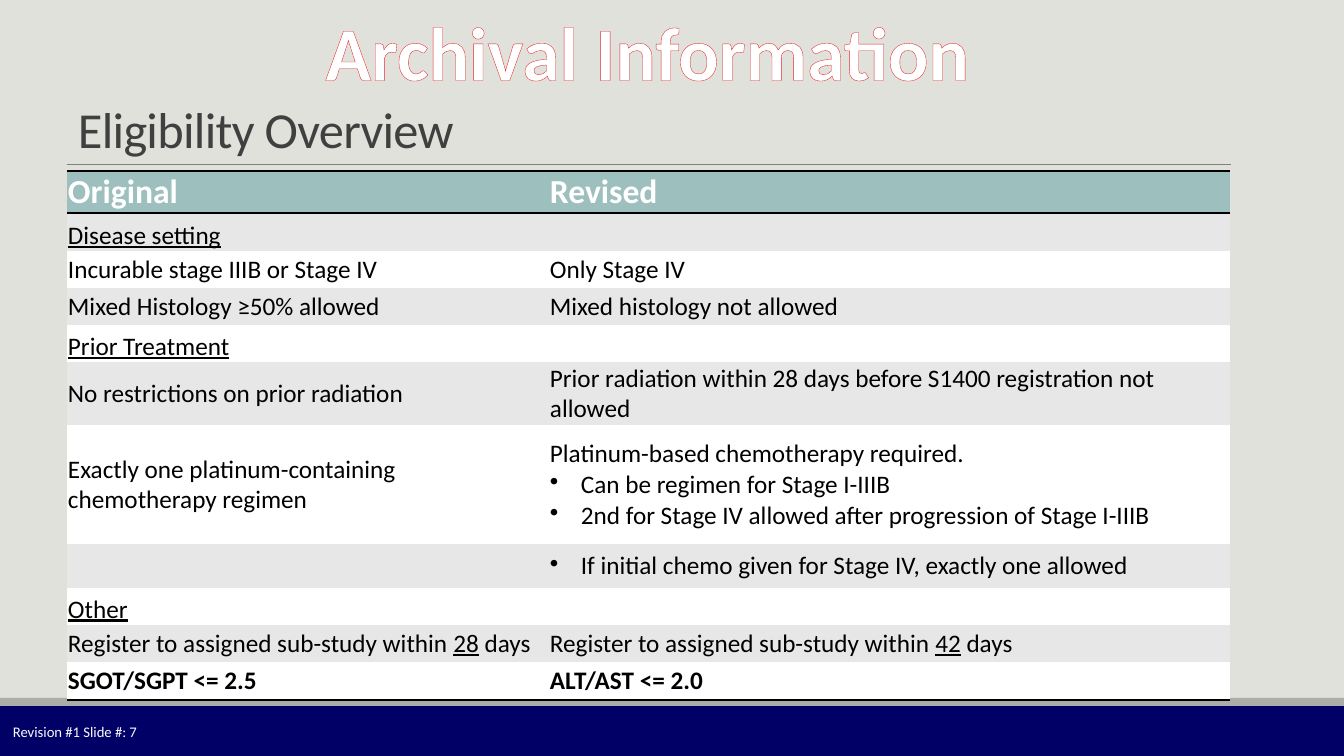
"""Build the eligibility overview slide with its table of original and revised criteria."""
import lxml.etree
import pptx
import pptx.dml.color
import pptx.enum.shapes
import pptx.enum.text
import pptx.oxml
import pptx.oxml.ns
import pptx.util

PX = 12192000 / 1344
COLORS = {
    "background": "E1E1DB", "footer": "000066", "footer edge": "ACADA8",
    "rule": "808080", "banner": "FFFFFF", "banner outline": "E62626",
    "title": "404040", "footer text": "FBFBFB", "header": "9DBFBE",
    "header text": "FFFFFF", "body text": "000000", "border": "000000",
    "odd row": "E7E7E7", "even row": "FFFFFF",
}
RGB = {part: pptx.dml.color.RGBColor.from_string(code) for part, code in COLORS.items()}
ANCHOR = pptx.enum.text.MSO_ANCHOR
ALIGN = pptx.enum.text.PP_ALIGN
NAMESPACE = pptx.oxml.ns.nsdecls("a")


def px(*lengths):
    return [round(length * PX) for length in lengths]


def add_run(paragraph, text, color, formats):
    run = paragraph.add_run()
    run.text = text
    run.font.name = "Calibri"
    run.font.color.rgb = RGB[color]
    for key, value in formats.items():
        setattr(run.font, key, value)
    return run


presentation = pptx.Presentation()
presentation.slide_width, presentation.slide_height = px(1344, 756)
slide = presentation.slides.add_slide(presentation.slide_layouts[6])
slide.background.fill.solid()
slide.background.fill.fore_color.rgb = RGB["background"]

for part, top, height in [("footer", 706, 50), ("footer edge", 698, 8)]:
    band = slide.shapes.add_shape(
        pptx.enum.shapes.MSO_SHAPE.RECTANGLE, *px(0, top, 1344, height))
    band.shadow.inherit = False
    band.fill.solid()
    band.fill.fore_color.rgb = RGB[part]
    band.line.fill.background()

rule = slide.shapes.add_connector(
    pptx.enum.shapes.MSO_CONNECTOR.STRAIGHT, *px(67, 164, 1231, 164))
rule.line.color.rgb = RGB["rule"]
rule.line.width = pptx.util.Pt(0.5)
lxml.etree.SubElement(rule._element.spPr, pptx.oxml.ns.qn("a:effectLst"))

labels = [
    ("banner", "Archival Information", (311, 0, 673, 102), ANCHOR.TOP,
     {"alignment": ALIGN.CENTER}, {"size": pptx.util.Pt(54), "bold": True}),
    ("title", "Eligibility Overview", (68, 4, 1162, 160), ANCHOR.BOTTOM,
     {"line_spacing": 0.85}, {"size": pptx.util.Pt(36)}),
    ("footer text", "Revision #1 Slide #: 7", (3, 712, 157, 40), ANCHOR.MIDDLE,
     {}, {"size": pptx.util.Pt(10.5)}),
]
label_runs = {}
for part, text, place, anchor, layout, formats in labels:
    frame = slide.shapes.add_textbox(*px(*place)).text_frame
    frame.word_wrap = True
    frame.vertical_anchor = anchor
    for key, value in layout.items():
        setattr(frame.paragraphs[0], key, value)
    label_runs[part] = add_run(frame.paragraphs[0], text, part, formats)

label_runs["title"].font._element.set("spc", "-50")
label_runs["banner"].font._element.insert(0, pptx.oxml.parse_xml(
    f'<a:ln {NAMESPACE} w="3175"><a:solidFill>'
    f'<a:srgbClr val="{COLORS["banner outline"]}"/></a:solidFill></a:ln>'))

criteria = [
    (42, "Original", "Revised"),
    (38, "_Disease setting_", ""),
    (37, "Incurable stage IIIB or Stage IV", "Only Stage IV"),
    (37, "Mixed Histology ≥50% allowed", "Mixed histology not allowed"),
    (37, "_Prior Treatment_", ""),
    (63, "No restrictions on prior radiation",
     "Prior radiation within 28 days before S1400 registration not allowed"),
    (119, "Exactly one platinum-containing chemotherapy regimen",
     "Platinum-based chemotherapy required.\n•Can be regimen for Stage I-IIIB\n"
     "•2nd for Stage IV allowed after progression of Stage I-IIIB"),
    (44, "", "•If initial chemo given for Stage IV, exactly one allowed"),
    (37, "_Other_", ""),
    (37, "Register to assigned sub-study within _28_ days",
     "Register to assigned sub-study within _42_ days"),
    (38, "SGOT/SGPT <= 2.5", "ALT/AST <= 2.0"),
]
last = len(criteria) - 1
table_frame = slide.shapes.add_table(
    len(criteria), 2, *px(67, 171, 1163, sum(row[0] for row in criteria)))
table = table_frame.table
table._tbl.tblPr.find(pptx.oxml.ns.qn("a:tableStyleId")).text = (
    "{2D5ABB26-0587-4C30-8999-92F81FD0307C}")
for column, width in zip(table.columns, px(482, 681)):
    column.width = width
cell_margins = dict(zip(
    ["margin_left", "margin_right", "margin_top", "margin_bottom"], px(1, 1, 1, 0)))

for index, (height, *texts) in enumerate(criteria):
    table.rows[index].height = px(height)[0]
    heading = index == 0 or texts[0].startswith("_")
    fill = "header" if index == 0 else "odd row" if index % 2 else "even row"
    color = "header text" if index == 0 else "body text"
    formats = {"size": pptx.util.Pt(24 if index == 0 else 18), "bold": index in (0, last)}
    edges = {0: ["lnT", "lnB"], last: ["lnB"]}.get(index, [])
    for cell, text in zip(table.rows[index].cells, texts):
        for key, value in cell_margins.items():
            setattr(cell, key, value)
        cell.vertical_anchor = ANCHOR.BOTTOM if heading else ANCHOR.MIDDLE
        cell.fill.solid()
        cell.fill.fore_color.rgb = RGB[fill]
        for position, edge in enumerate(edges):
            cell._tc.tcPr.insert(position, pptx.oxml.parse_xml(
                f'<a:{edge} {NAMESPACE} w="25400"><a:solidFill>'
                f'<a:srgbClr val="{COLORS["border"]}"/></a:solidFill></a:{edge}>'))
        for number, line in enumerate(text.split("\n")):
            frame = cell.text_frame
            paragraph = frame.add_paragraph() if number else frame.paragraphs[0]
            if line.startswith("•"):
                properties = paragraph._p.get_or_add_pPr()
                indent = px(31)[0]
                properties.set("marL", str(indent))
                properties.set("indent", str(-indent))
                bullet = lxml.etree.SubElement(properties, pptx.oxml.ns.qn("a:buChar"))
                bullet.set("char", "•")
            paragraph.font.size = formats["size"]
            for piece, words in enumerate(line.lstrip("•").split("_")):
                if words:
                    add_run(paragraph, words, color, {**formats, "underline": piece % 2 == 1})

presentation.save("out.pptx")
